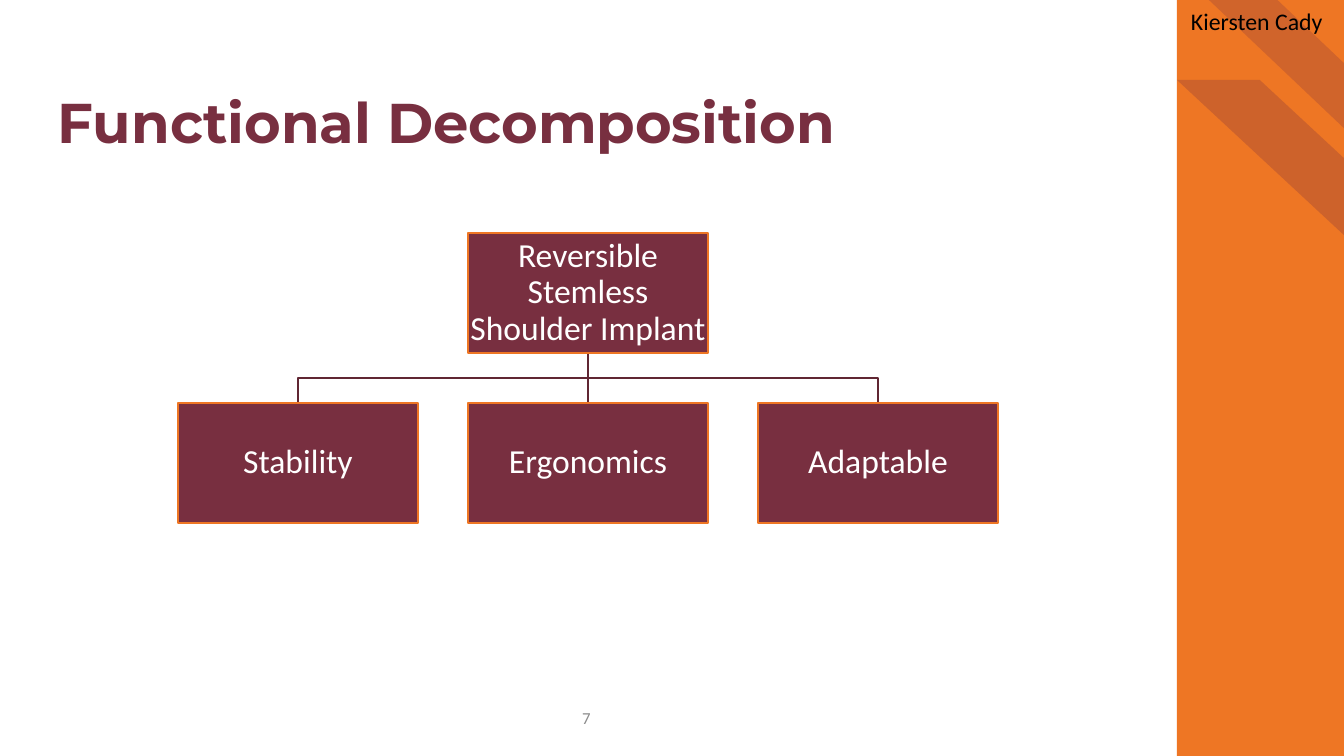
"""Build the functional decomposition slide."""
from dataclasses import dataclass

from lxml.etree import SubElement
from pptx import Presentation
from pptx.dml.color import RGBColor
from pptx.enum.shapes import MSO_CONNECTOR, MSO_SHAPE
from pptx.enum.text import MSO_ANCHOR, PP_ALIGN
from pptx.oxml.ns import qn
from pptx.util import Pt

SCALE = 914400 / 100.8
HUES = {
    "orange": "EE7624",
    "garnet": "782F40",
    "branch": "602633",
    "gray": "8C8C8C",
    "white": "FFFFFF",
    "black": "000000",
}
NODE_W, NODE_H = 240, 120
MID_X, PITCH = 588, 290
ROOT_Y, LEAF_Y = 233, 403


@dataclass
class Box:
    left: int
    top: int
    width: int
    height: int

    @property
    def mid(self) -> int:
        return self.left + self.width // 2

    @property
    def base(self) -> int:
        return self.top + self.height

    def frame(self) -> tuple:
        return tuple(px(n) for n in (self.left, self.top, self.width, self.height))


@dataclass
class Stripe:
    box: Box
    bend: float
    alpha: int


@dataclass
class Node:
    label: str
    box: Box


def px(count: int) -> int:
    return round(count * SCALE)


def hue(name: str) -> RGBColor:
    return RGBColor.from_string(HUES[name])


def write(shape, text: str, *, size: int, color: str, font: str = "Calibri",
          bold: bool = False, align=PP_ALIGN.LEFT, anchor=MSO_ANCHOR.TOP,
          pad: tuple = (10, 5), wrap: bool = True, lead: float = 1.0) -> None:
    frame = shape.text_frame
    frame.word_wrap = wrap
    frame.vertical_anchor = anchor
    frame.margin_left = frame.margin_right = px(pad[0])
    frame.margin_top = frame.margin_bottom = px(pad[1])
    line = frame.paragraphs[0]
    line.alignment, line.line_spacing = align, lead
    run = line.add_run()
    run.text = text
    run.font.name, run.font.size, run.font.bold = font, Pt(size), bold
    run.font.color.rgb = hue(color)


def label(slide, box: Box, text: str, **style) -> None:
    write(slide.shapes.add_textbox(*box.frame()), text, **style)


def block(slide, box: Box, fill: str, edge: str = "", kind=MSO_SHAPE.RECTANGLE):
    shape = slide.shapes.add_shape(kind, *box.frame())
    shape.shadow.inherit = False
    shape.fill.solid()
    shape.fill.fore_color.rgb = hue(fill)
    if edge:
        shape.line.color.rgb = hue(edge)
        shape.line.width = Pt(1)
    else:
        shape.line.fill.background()
    return shape


def draw_stripe(slide, item: Stripe) -> None:
    shape = block(slide, item.box, "garnet", kind=MSO_SHAPE.DIAGONAL_STRIPE)
    shape.adjustments[0] = item.bend
    props = shape.element.spPr
    props.find(qn("a:xfrm")).set("flipH", "1")
    tint = props.find(qn("a:solidFill")).find(qn("a:srgbClr"))
    SubElement(tint, qn("a:alpha")).set("val", str(item.alpha * 1000))


def draw_branch(slide, root: Box, leaf: Box) -> None:
    if root.mid == leaf.mid:
        ends = (root.mid, root.base, leaf.mid, leaf.top)
        line = slide.shapes.add_connector(MSO_CONNECTOR.STRAIGHT, *map(px, ends))
        SubElement(line.element.spPr, qn("a:effectLst"))
    else:
        bend = (root.base + leaf.top) // 2
        path = slide.shapes.build_freeform(root.mid, root.base, scale=SCALE)
        path.add_line_segments([(root.mid, bend), (leaf.mid, bend),
                                (leaf.mid, leaf.top)], close=False)
        line = path.convert_to_shape()
        line.shadow.inherit = False
        line.fill.background()
    line.line.color.rgb = hue("branch")
    line.line.width = Pt(1)


def draw_node(slide, node: Node) -> None:
    shape = block(slide, node.box, "garnet", "orange")
    write(shape, node.label, size=24, color="white", align=PP_ALIGN.CENTER,
          anchor=MSO_ANCHOR.MIDDLE, pad=(2, 2), lead=0.9)


def main() -> None:
    deck = Presentation()
    deck.slide_width, deck.slide_height = px(1344), px(756)
    slide = deck.slides.add_slide(deck.slide_layouts[6])

    block(slide, Box(1177, 0, 167, 756), "orange")
    for item in (Stripe(Box(1177, 80, 169, 157), 0.51, 28),
                 Stripe(Box(1209, 0, 137, 130), 0.5, 25)):
        draw_stripe(slide, item)

    label(slide, Box(546, 703, 81, 30), "7", size=12, color="gray",
          align=PP_ALIGN.CENTER, anchor=MSO_ANCHOR.MIDDLE)
    label(slide, Box(58, 50, 1058, 106), "Functional Decomposition", size=40,
          color="garnet", font="Montserrat", bold=True,
          anchor=MSO_ANCHOR.BOTTOM, pad=(0, 0), lead=0.9)

    left = MID_X - NODE_W // 2
    root = Node("Reversible Stemless Shoulder Implant",
                Box(left, ROOT_Y, NODE_W, NODE_H))
    leaves = [Node(name, Box(left + step * PITCH, LEAF_Y, NODE_W, NODE_H))
              for step, name in enumerate(("Stability", "Ergonomics", "Adaptable"), -1)]
    for leaf in leaves:
        draw_branch(slide, root.box, leaf.box)
    for node in (root, *leaves):
        draw_node(slide, node)

    label(slide, Box(1181, 2, 158, 68), "Kiersten Cady", size=17,
          color="black", wrap=False)
    deck.save("out.pptx")


if __name__ == "__main__":
    main()
